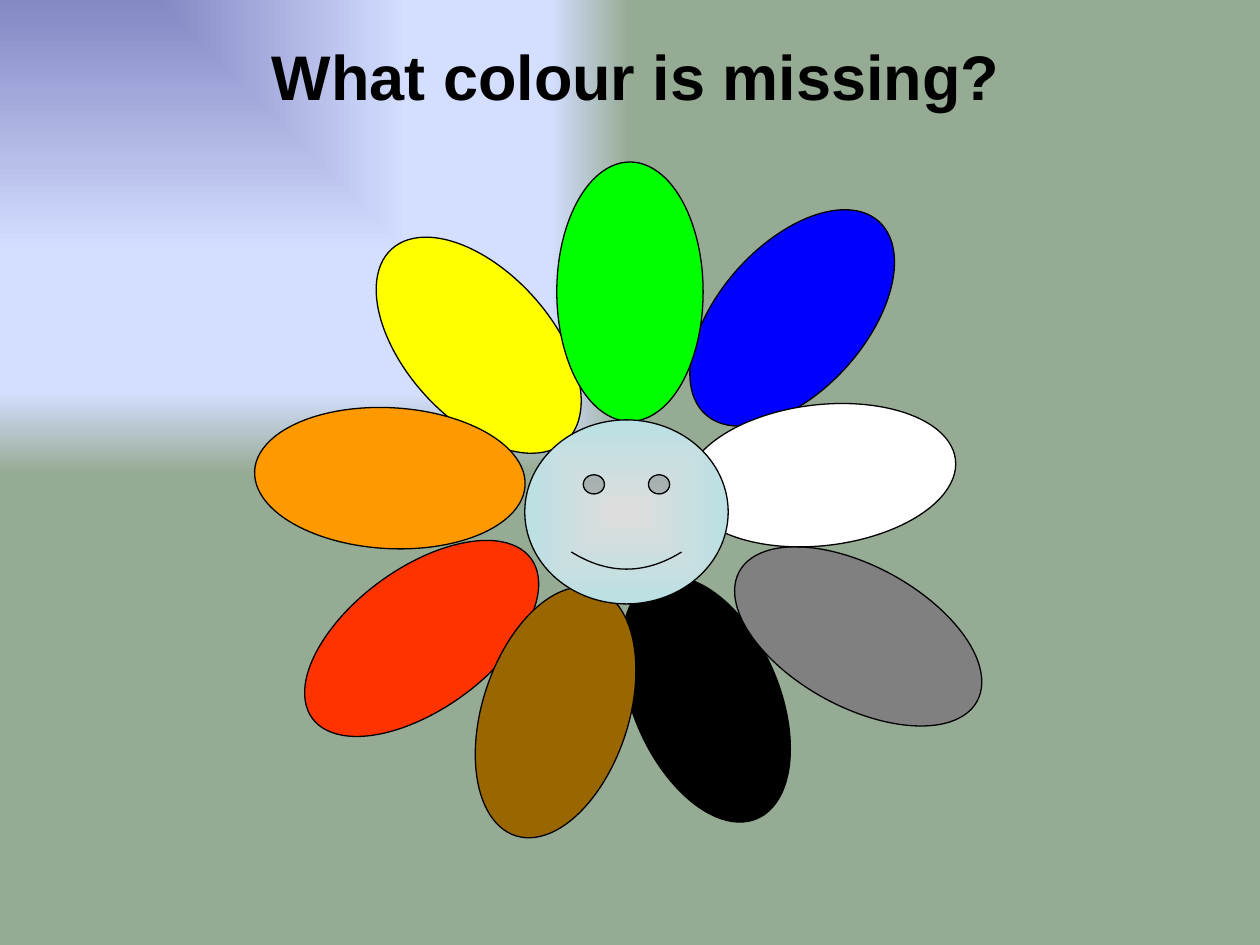
from lxml.etree import SubElement
from pptx import Presentation
from pptx.dml.color import RGBColor
from pptx.enum.shapes import MSO_SHAPE
from pptx.enum.text import PP_ALIGN
from pptx.oxml import parse_xml
from pptx.oxml.ns import nsdecls, qn
from pptx.util import Cm, Pt

TITLE = "What colour is missing?"
TITLE_BOX = (4.92, 0.64, 15.8, 2.34)
LONG, WIDE = (5.46, 2.84), (5.23, 2.95)
PETALS = [
    ("FFFF00", 9.65, 6.96, WIDE, 47.9),
    ("FF3300", 8.5, 12.87, LONG, 323.9),
    ("000000", 14.23, 14.1, WIDE, 66.8),
    ("996600", 11.2, 14.36, WIDE, 108),
    ("0000FF", 15.97, 6.41, WIDE, 311.9),
    ("00FF00", 12.7, 5.88, WIDE, 270),
    ("FF9900", 7.86, 9.64, LONG, 3.1),
    ("808080", 17.3, 12.83, LONG, 28.6),
    ("FFFFFF", 16.55, 9.58, LONG, 353.4),
]
FACE_CENTRE, FACE_SIZE = (12.63, 10.32), (4.1, 3.71)
FACE_STOPS = [(0, "DDDDDD"), (100, "BBE0E3")]
SKY_STOPS = [(0, "8488C4"), (53, "D4DEFF"), (83, "D4DEFF"), (100, "96AB94")]


def colour(value):
    return RGBColor.from_string(value)


def paint_gradient(owner, stops, pattern, focus):
    colours = "".join(
        f'<a:gs pos="{pos * 1000}"><a:srgbClr val="{value}"/></a:gs>' for pos, value in stops
    )
    left, top, right, bottom = (edge * 1000 for edge in focus)
    gradient = parse_xml(
        f'<a:gradFill {nsdecls("a")} rotWithShape="1"><a:gsLst>{colours}</a:gsLst>'
        f'<a:path path="{pattern}"><a:fillToRect l="{left}" t="{top}" r="{right}" b="{bottom}"/>'
        "</a:path></a:gradFill>"
    )
    owner.replace(owner.find(qn("a:solidFill")), gradient)


def add_part(slide, preset, centre, size, fill):
    (x, y), (width, height) = centre, size
    part = slide.shapes.add_shape(
        preset, Cm(x - width / 2), Cm(y - height / 2), Cm(width), Cm(height)
    )
    part.shadow.inherit = False
    part.fill.solid()
    part.fill.fore_color.rgb = colour(fill)
    part.line.color.rgb = colour("000000")
    part.line.width = Pt(0.75)
    return part


def add_title(slide):
    frame = slide.shapes.add_textbox(*map(Cm, TITLE_BOX)).text_frame
    frame.word_wrap = False
    paragraph = frame.paragraphs[0]
    paragraph.alignment = PP_ALIGN.CENTER
    run = paragraph.add_run()
    run.text = TITLE
    font = run.font
    font.name, font.size, font.bold = "Arial", Pt(36), True
    font.color.rgb = colour("FF0000")
    properties = run._r.get_or_add_rPr()
    SubElement(properties.find(".//" + qn("a:srgbClr")), qn("a:alpha"), val="50000")
    properties.insert(0, parse_xml(
        f'<a:ln {nsdecls("a")} w="12700"><a:solidFill><a:srgbClr val="000000"/></a:solidFill></a:ln>'
    ))


def main():
    deck = Presentation()
    deck.slide_width, deck.slide_height = Cm(25.4), Cm(19.05)
    slide = deck.slides.add_slide(deck.slide_layouts[6])

    slide.background.fill.solid()
    backdrop = slide.element.find(".//" + qn("p:bgPr"))
    paint_gradient(backdrop, SKY_STOPS, "rect", (0, 0, 100, 100))

    add_title(slide)
    for fill, x, y, size, angle in PETALS:
        add_part(slide, MSO_SHAPE.OVAL, (x, y), size, fill).rotation = angle

    face = add_part(slide, MSO_SHAPE.SMILEY_FACE, FACE_CENTRE, FACE_SIZE, "BBE0E3")
    face.adjustments[0] = 0.047
    paint_gradient(face.element.spPr, FACE_STOPS, "shape", (50, 50, 50, 50))

    deck.save("out.pptx")


if __name__ == "__main__":
    main()
